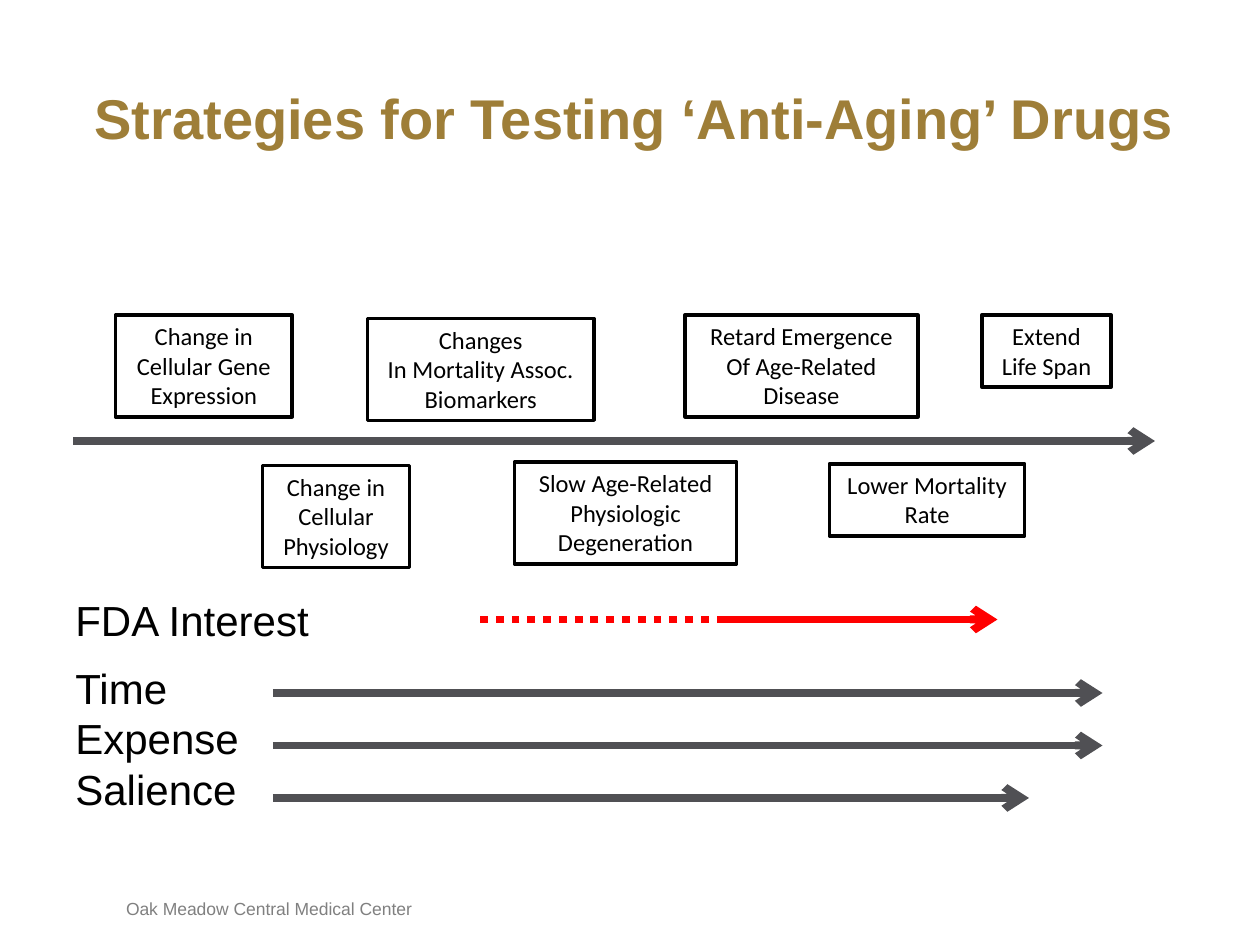
from dataclasses import dataclass

from pptx import Presentation
from pptx.dml.color import RGBColor
from pptx.enum.dml import MSO_LINE
from pptx.enum.shapes import MSO_CONNECTOR, MSO_SHAPE
from pptx.enum.text import MSO_ANCHOR, PP_ALIGN
from pptx.oxml.ns import qn
from pptx.util import Pt
from lxml.etree import SubElement


@dataclass(frozen=True)
class Theme:
    gold: str = "9E7E38"
    black: str = "000000"
    white: str = "FFFFFF"
    slate: str = "505054"
    red: str = "FF0000"
    gray: str = "808080"
    heading_font: str = "Arial"
    box_font: str = "Calibri"
    title_size: float = 32
    label_size: float = 24
    box_size: float = 14
    footer_size: float = 10
    box_line: float = 2
    arrow_line: float = 4.5


THEME = Theme()

# Content: all lengths in points
TITLE = "Strategies for Testing ‘Anti-Aging’ Drugs"
FOOTER = "Oak Meadow Central Medical Center"

# Milestones: left, top, width, lines
MILESTONES = [
    (66, 180, 101, ["Change in", "Cellular Gene", "Expression"]),
    (150, 266, 84, ["Change in", "Cellular", "Physiology"]),
    (210, 182, 129.5, ["Changes", "In Mortality Assoc.", "Biomarkers"]),
    (294, 264, 127, ["Slow Age-Related", "Physiologic", "Degeneration"]),
    (391.5, 180, 133, ["Retard Emergence", "Of Age-Related", "Disease"]),
    (474, 265, 111.5, ["Lower Mortality", "Rate"]),
    (561, 180, 74, ["Extend", "Life Span"]),
]
BOX_PADDING = 7.2
BOX_LINE_HEIGHT = 17

# Row labels: left, top, width, height, lines
LABELS = [
    (36, 375, 109, 153, ["Time", "Expense", "Salience"]),
    (36, 336, 150, 37, ["FDA Interest"]),
]

TIMELINE = (42, 660, 252)
MEASURE_LEFT, MEASURE_TOP, MEASURE_STEP = 156, 396, 30
MEASURE_ENDS = [630, 630, 588]
INTEREST_START, INTEREST_SPLIT, INTEREST_END, INTEREST_TOP = 270, 414, 570, 354


def write_lines(shape, lines, font, size, color, bold=False,
                align=PP_ALIGN.LEFT, anchor=MSO_ANCHOR.TOP, wrap=False, margins=True):
    frame = shape.text_frame
    frame.word_wrap = wrap
    frame.vertical_anchor = anchor
    if not margins:
        frame.margin_left = frame.margin_right = 0
        frame.margin_top = frame.margin_bottom = 0
    frame.text = "\n".join(lines)
    for paragraph in frame.paragraphs:
        paragraph.alignment = align
        paragraph.font.name = font
        paragraph.font.size = Pt(size)
        paragraph.font.bold = bold
        paragraph.font.color.rgb = RGBColor.from_string(color)


def add_text(slide, left, top, width, height, lines, size, color, **options):
    shape = slide.shapes.add_textbox(Pt(left), Pt(top), Pt(width), Pt(height))
    write_lines(shape, lines, THEME.heading_font, size, color, **options)


def add_milestone(slide, left, top, width, lines):
    height = 2 * BOX_PADDING / 2 + BOX_LINE_HEIGHT * len(lines)
    shape = slide.shapes.add_shape(
        MSO_SHAPE.RECTANGLE, Pt(left), Pt(top), Pt(width), Pt(height))
    shape.shadow.inherit = False
    shape.fill.solid()
    shape.fill.fore_color.rgb = RGBColor.from_string(THEME.white)
    shape.line.color.rgb = RGBColor.from_string(THEME.black)
    shape.line.width = Pt(THEME.box_line)
    write_lines(shape, lines, THEME.box_font, THEME.box_size, THEME.black,
                align=PP_ALIGN.CENTER)


def add_line(slide, start, end, top, color, dotted=False):
    connector = slide.shapes.add_connector(
        MSO_CONNECTOR.STRAIGHT, Pt(start), Pt(top), Pt(end), Pt(top))
    connector.line.color.rgb = RGBColor.from_string(color)
    connector.line.width = Pt(THEME.arrow_line)
    if dotted:
        connector.line.dash_style = MSO_LINE.ROUND_DOT
    else:
        SubElement(connector.line._get_or_add_ln(), qn("a:tailEnd"), type="arrow")
    SubElement(connector._element.spPr, qn("a:effectLst"))


def main():
    presentation = Presentation()
    presentation.slide_width, presentation.slide_height = Pt(720), Pt(540)
    slide = presentation.slides.add_slide(presentation.slide_layouts[6])

    # Footer and title
    add_text(slide, 72, 512.5, 228, 12.5, [FOOTER], THEME.footer_size, THEME.gray,
             anchor=MSO_ANCHOR.BOTTOM, wrap=True, margins=False)
    add_text(slide, 54, 48, 660, 78, [TITLE], THEME.title_size, THEME.gold,
             bold=True, wrap=True, margins=False)

    # Timeline with milestones above and below
    for milestone in MILESTONES:
        add_milestone(slide, *milestone)
    add_line(slide, *TIMELINE, THEME.slate)

    # Row labels
    for label in LABELS:
        add_text(slide, *label, THEME.label_size, THEME.black)

    # Time, expense and salience arrows
    for row, end in enumerate(MEASURE_ENDS):
        add_line(slide, MEASURE_LEFT, end, MEASURE_TOP + row * MEASURE_STEP, THEME.slate)

    # Interest: firm to the right, tentative to the left
    add_line(slide, INTEREST_SPLIT, INTEREST_END, INTEREST_TOP, THEME.red)
    add_line(slide, INTEREST_SPLIT, INTEREST_START, INTEREST_TOP, THEME.red, dotted=True)

    presentation.save("out.pptx")


if __name__ == "__main__":
    main()
